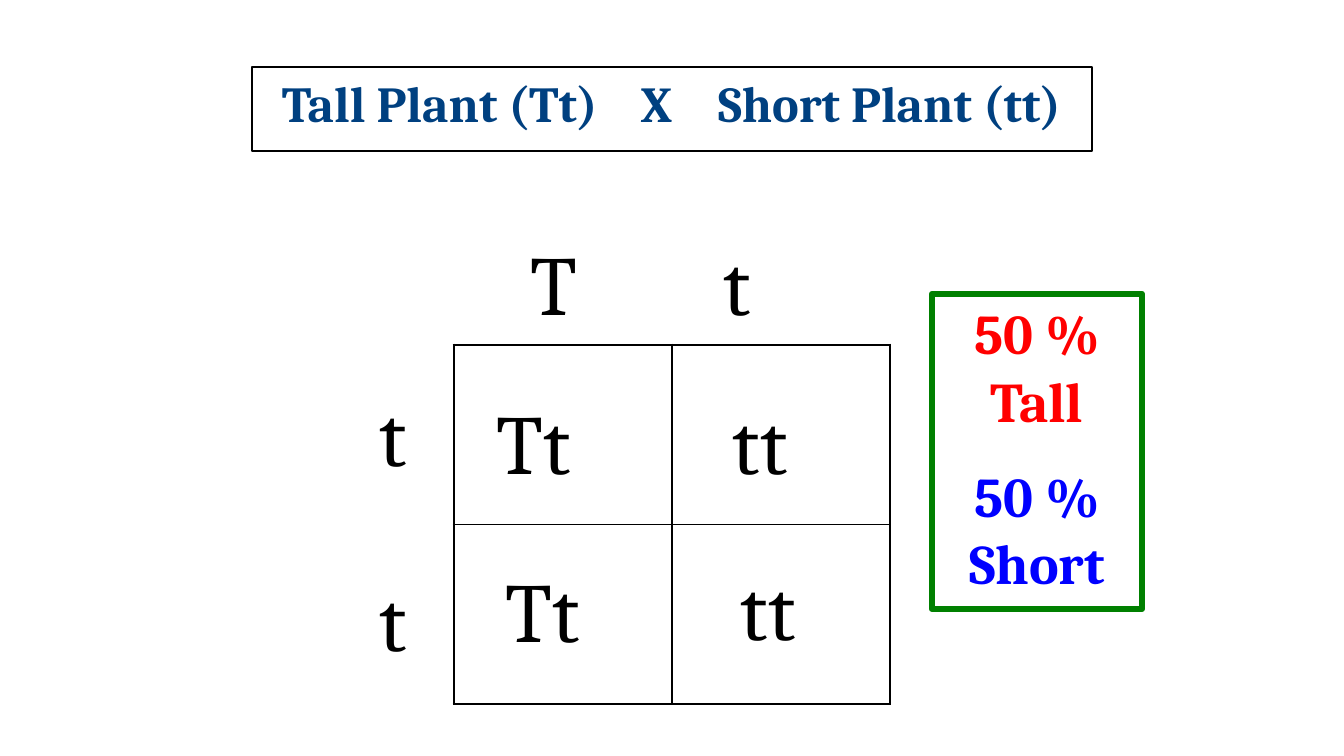
from lxml import etree
from pptx import Presentation
from pptx.dml.color import RGBColor
from pptx.enum import shapes, text
from pptx.oxml import ns
from pptx.util import Emu, Pt

BLACK = RGBColor(0, 0, 0)
NAVY = RGBColor(0, 0x40, 0x80)
RED = RGBColor(0xFF, 0, 0)
BLUE = RGBColor(0, 0, 0xFF)
GREEN = RGBColor(0, 0x80, 0)

FONT = "Cambria"
ALLELE_W, ALLELE_H = 143, 112


def px(length):
    return Emu(round(length * 914400 / 100.8))


def place(box):
    return [px(length) for length in box]


def write(frame, words, size=60, color=BLACK, bold=False, align=text.PP_ALIGN.LEFT):
    """Fill the frame's first paragraph, or add one after existing text."""
    frame.word_wrap = True
    frame.auto_size = text.MSO_AUTO_SIZE.SHAPE_TO_FIT_TEXT
    frame.vertical_anchor = text.MSO_ANCHOR.TOP
    paragraph = frame.add_paragraph() if frame.text else frame.paragraphs[0]
    paragraph.alignment = align
    paragraph.space_before = Pt(size / 2)
    paragraph.line_spacing = 1.0
    run = paragraph.add_run()
    run.text = words
    run.font.name, run.font.size, run.font.bold = FONT, Pt(size), bold
    run.font.color.rgb = color
    return paragraph


def outline(shape, color, width):
    shape.line.color.rgb = color
    shape.line.width = Pt(width)


def add_cross(slide, box):
    """Title naming the two parents, with tab stops around the X."""
    cross = slide.shapes.title
    cross.left, cross.top, cross.width, cross.height = place(box)
    outline(cross, BLACK, 1.5)
    cross.text_frame.margin_left = px(30)
    paragraph = write(cross.text_frame, "Tall Plant (Tt)\tX\tShort Plant (tt)",
                      size=36, color=NAVY, bold=True)
    stops = etree.SubElement(paragraph._p.get_or_add_pPr(), ns.qn("a:tabLst"))
    for stop in (359, 436):
        etree.SubElement(stops, ns.qn("a:tab"), pos=str(px(stop)), algn="l")


def add_border(cell, side, width):
    border = etree.SubElement(cell._tc.get_or_add_tcPr(), ns.qn(f"a:ln{side}"),
                              w=str(Pt(width)))
    fill = etree.SubElement(border, ns.qn("a:solidFill"))
    etree.SubElement(fill, ns.qn("a:srgbClr"), val=str(BLACK))


def add_allele(slide, letters, left, top):
    label = slide.shapes.add_textbox(*place((left, top, ALLELE_W, ALLELE_H)))
    write(label.text_frame, letters)


def add_punnett_square(slide, box):
    """Two-by-two grid with gametes outside and offspring inside."""
    left, top = box[:2]
    grid = slide.shapes.add_table(2, 2, *place(box)).table
    grid.first_row = grid.horz_banding = False
    for row in range(2):
        for col in range(2):
            cell = grid.cell(row, col)
            outer = {"L": col == 0, "R": col == 1, "T": row == 0, "B": row == 1}
            for side, is_outer in outer.items():
                add_border(cell, side, 2.25 if is_outer else 1)
            cell.fill.background()

    for letters, dx, dy in (
        ("T", 67, -118), ("t", 260, -118),
        ("t", -84, 33), ("t", -84, 218),
        ("Tt", 33, 41), ("Tt", 42, 209),
        ("tt", 269, 41), ("tt", 277, 207),
    ):
        add_allele(slide, letters, left + dx, top + dy)


def add_ratio(slide, box):
    ratio = slide.shapes.add_shape(shapes.MSO_SHAPE.RECTANGLE, *place(box))
    ratio.shadow.inherit = False
    ratio.fill.background()
    outline(ratio, GREEN, 4.5)
    for share, color in (("50 % Tall", RED), ("50 % Short", BLUE)):
        write(ratio.text_frame, share, size=40, color=color, bold=True,
              align=text.PP_ALIGN.CENTER)


def main():
    deck = Presentation()
    deck.slide_width, deck.slide_height = px(1344), px(756)
    slide = deck.slides.add_slide(deck.slide_layouts[5])
    add_cross(slide, (252, 67, 840, 72))
    add_punnett_square(slide, (454, 345, 436, 359))
    add_ratio(slide, (932, 294, 210, 315))
    deck.save("out.pptx")


if __name__ == "__main__":
    main()
